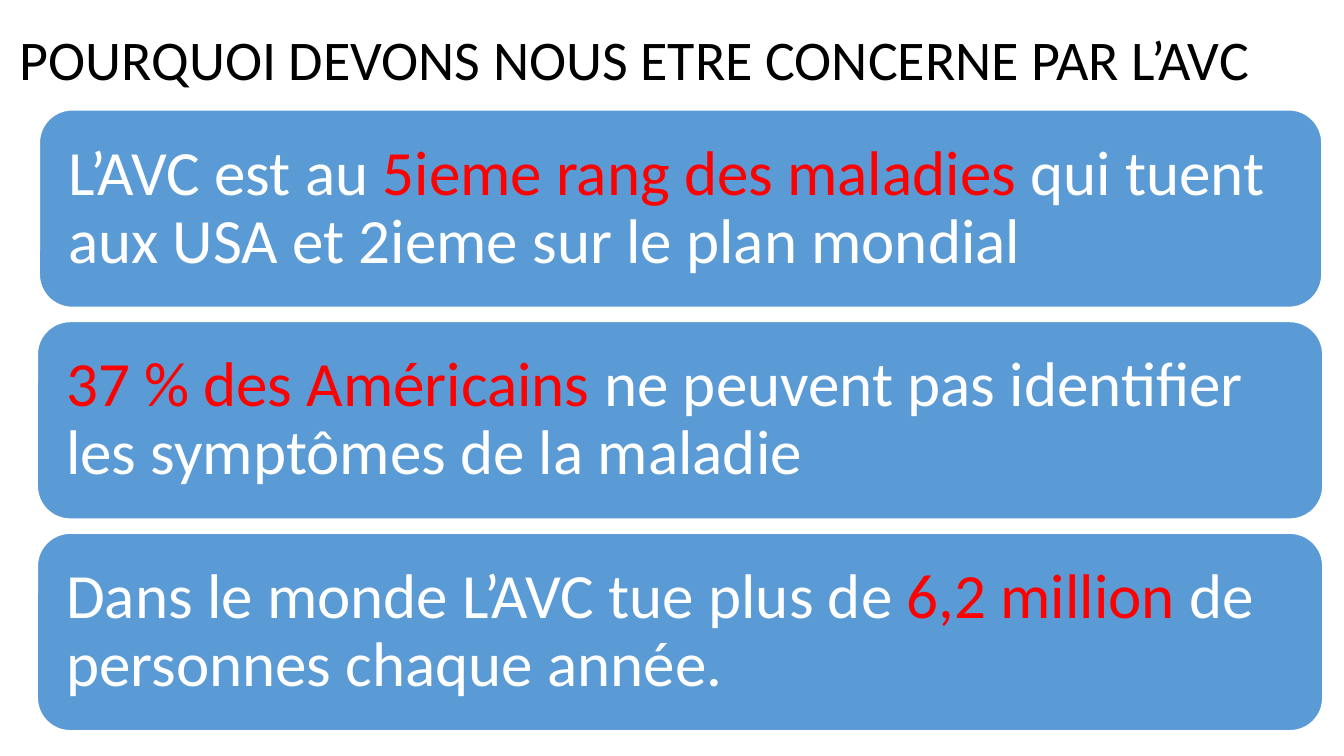
from pptx import Presentation
from pptx.dml.color import RGBColor
from pptx.enum.shapes import MSO_SHAPE as Shape
from pptx.enum.text import MSO_ANCHOR as Anchor, PP_ALIGN as Align
from pptx.util import Inches, Pt

WHITE, BLACK, RED, BLUE = "FFFFFF", "000000", "FF0000", "5B9BD5"
TITLE = "POURQUOI DEVONS NOUS ETRE CONCERNE PAR L’AVC"

# Each fact: left edge, width, then its text as (words, colour)
FACTS = [
    (0.39, 12.72, [("L’AVC est au ", WHITE),
                   ("5ieme rang des maladies ", RED),
                   ("qui tuent aux USA et 2ieme sur le plan mondial", WHITE)]),
    (0.37, 12.75, [("37 % des Américains ", RED),
                   ("ne peuvent pas identifier les symptômes de la maladie", WHITE)]),
    (0.37, 12.75, [("Dans le monde L’AVC tue plus de ", WHITE),
                   ("6,2 million ", RED),
                   ("de personnes chaque année.", WHITE)]),
]
FACT_TOP, FACT_HEIGHT, FACT_STEP = 1.09, 1.96, 2.1
FACT_INSET = Inches(0.19)


def rgb(colour):
    return RGBColor.from_string(colour)


def write(shape, words, size):
    """Fill the shape with one left-aligned paragraph of coloured words."""
    frame = shape.text_frame
    frame.word_wrap = True
    frame.vertical_anchor = Anchor.MIDDLE
    paragraph = frame.paragraphs[0]
    paragraph.alignment = Align.LEFT
    paragraph.line_spacing = 0.9
    paragraph.font.name = "Calibri"
    paragraph.font.size = Pt(size)
    for text, colour in words:
        run = paragraph.add_run()
        run.text = text
        run.font.color.rgb = rgb(colour)
    return frame


def add_fact(slide, row, left, width, words):
    box = slide.shapes.add_shape(
        Shape.ROUNDED_RECTANGLE, Inches(left), Inches(FACT_TOP + row * FACT_STEP),
        Inches(width), Inches(FACT_HEIGHT))
    box.shadow.inherit = False
    box.fill.solid()
    box.fill.fore_color.rgb = rgb(BLUE)
    box.line.color.rgb = rgb(WHITE)
    box.line.width = Pt(1)
    frame = write(box, words, 45)
    frame.margin_left = frame.margin_right = FACT_INSET
    frame.margin_top = frame.margin_bottom = FACT_INSET


def main():
    deck = Presentation()
    deck.slide_width, deck.slide_height = Inches(13.33), Inches(7.5)
    slide = deck.slides.add_slide(deck.slide_layouts[6])
    title = slide.shapes.add_textbox(
        Inches(0.1), Inches(0.15), Inches(13.03), Inches(0.93))
    write(title, [(TITLE, BLACK)], 40)
    for row, (left, width, words) in enumerate(FACTS):
        add_fact(slide, row, left, width, words)
    deck.save("out.pptx")


if __name__ == "__main__":
    main()
